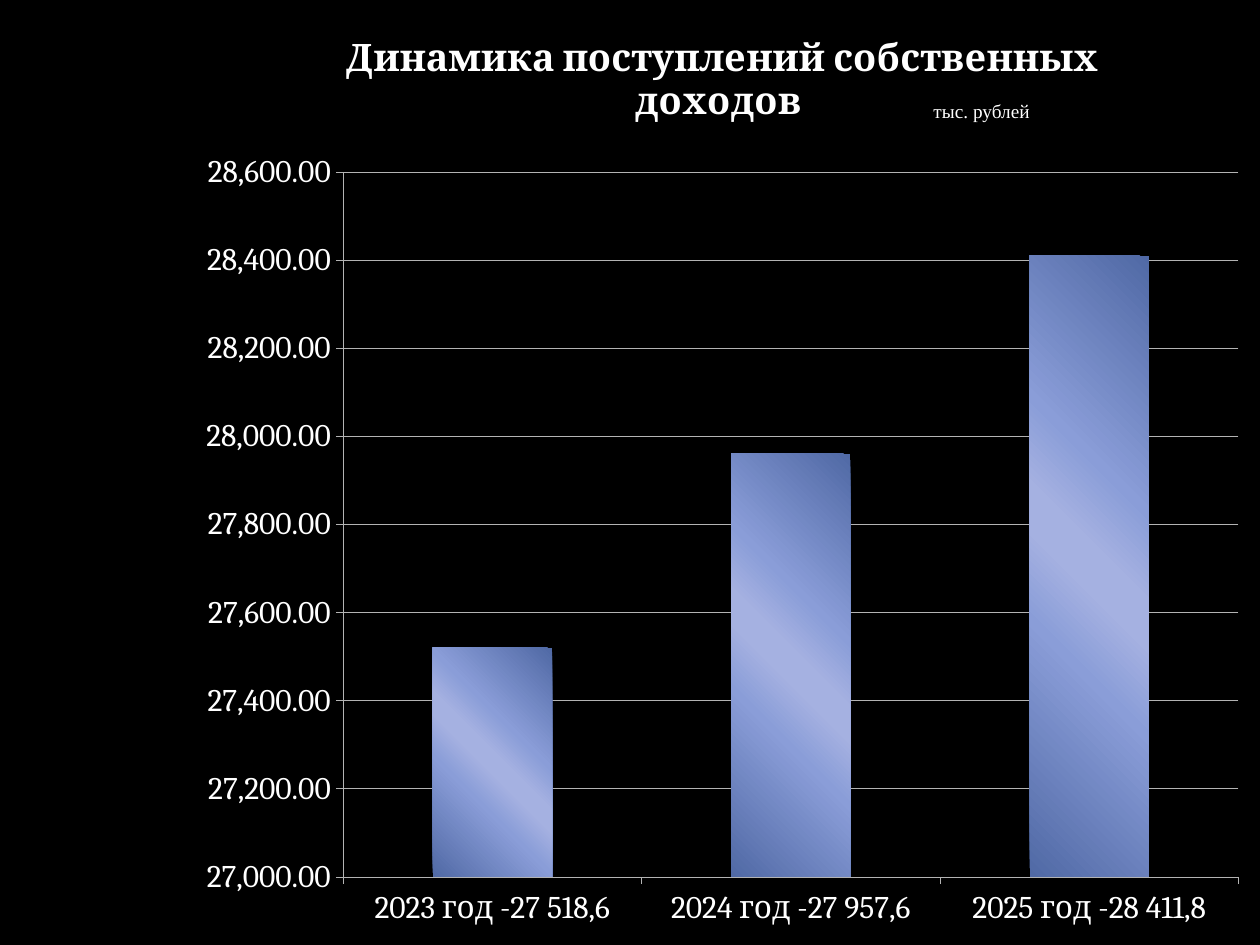
from lxml import etree
from pptx import Presentation, util as u
from pptx.chart.data import CategoryChartData
from pptx.dml.color import RGBColor
from pptx.enum import chart as charts, text
from pptx.oxml import parse_xml
from pptx.oxml.ns import nsdecls, qn

WIDTH, HEIGHT = 10, 7.5
WHITE, AXIS_GREY = "FFFFFF", "B3B3B3"
TITLE = "Динамика поступлений собственных доходов "
INCOME = {
    "2023 год -27 518,6": 27520,
    "2024 год -27 957,6": 27960,
    "2025 год -28 411,8": 28410,
}
BAR_STOPS = [(0, "5069A5"), (35, "8A9DD8"), (47, "A5B1E1"),
             (53, "A5B1E1"), (65, "8A9DD8"), (100, "5069A5")]


def color(hex_string):
    return RGBColor.from_string(hex_string)


def box(left, top, width, height):
    """Turn shares of the slide's size into lengths."""
    return (u.Inches(left * WIDTH), u.Inches(top * HEIGHT),
            u.Inches(width * WIDTH), u.Inches(height * HEIGHT))


def style_font(font, name, size, bold=False):
    font.name, font.size, font.bold = name, u.Pt(size), bold
    font.color.rgb = color(WHITE)


def style_line(line):
    line.color.rgb = color(AXIS_GREY)
    line.width = u.Pt(0.25)


def fill_gradient(series, stops, degrees):
    stop_xml = "".join(
        f'<a:gs pos="{share * 1000}"><a:srgbClr val="{value}"/></a:gs>'
        for share, value in stops)
    properties = series.format.fill._xPr
    properties.insert(0, parse_xml(
        f'<a:gradFill {nsdecls("a")} rotWithShape="1"><a:gsLst>{stop_xml}</a:gsLst>'
        f'<a:lin ang="{degrees * 60000}" scaled="0"/></a:gradFill>'))


def place_plot(chart, **shares):
    """Fix the inner plot area at shares of the chart's size."""
    area = chart._chartSpace.chart.plotArea
    for old in area.findall(qn("c:layout")):
        area.remove(old)
    layout = etree.Element(qn("c:layout"))
    manual = etree.SubElement(layout, qn("c:manualLayout"))
    settings = {"layoutTarget": "inner", "xMode": "edge", "yMode": "edge", **shares}
    for tag, value in settings.items():
        etree.SubElement(manual, qn(f"c:{tag}")).set("val", str(value))
    area.insert(0, layout)


def add_income_chart(slide):
    data = CategoryChartData(number_format="#,##0.00")
    data.categories = list(INCOME)
    data.add_series(TITLE, list(INCOME.values()))
    chart = slide.shapes.add_chart(
        charts.XL_CHART_TYPE.COLUMN_STACKED, *box(0.147, 0, 0.853, 1), data).chart
    style_font(chart.font, "Cambria", 18)
    chart.has_legend = False

    chart.has_title = True
    run = chart.chart_title.text_frame.paragraphs[0].add_run()
    run.text = TITLE
    style_font(run.font, "Cambria", 21.6, bold=True)
    chart.chart_title.include_in_layout = False

    plot = chart.plots[0]
    plot.vary_by_categories = False
    plot.gap_width, plot.overlap = 150, 100
    fill_gradient(plot.series[0], BAR_STOPS, 315)

    for axis in (chart.category_axis, chart.value_axis):
        axis.major_tick_mark = charts.XL_TICK_MARK.OUTSIDE
        style_line(axis.format.line)
    values = chart.value_axis
    values.minimum_scale, values.maximum_scale, values.major_unit = 27000, 28600, 200
    values.tick_labels.number_format = "#,##0.00"
    values.tick_labels.number_format_is_linked = False
    style_line(values.major_gridlines.format.line)
    place_plot(chart, x=0.147, y=0.182, w=0.833, h=0.746)


def add_unit_label(slide):
    frame = slide.shapes.add_textbox(*box(0.731, 0.099, 0.098, 0.038)).text_frame
    frame.word_wrap = False
    frame.auto_size = text.MSO_AUTO_SIZE.SHAPE_TO_FIT_TEXT
    run = frame.paragraphs[0].add_run()
    run.text = "тыс. рублей"
    style_font(run.font, "Times New Roman", 11)


def main():
    presentation = Presentation()
    presentation.slide_width, presentation.slide_height = u.Inches(WIDTH), u.Inches(HEIGHT)
    slide = presentation.slides.add_slide(presentation.slide_layouts[6])
    slide.background.fill.solid()
    slide.background.fill.fore_color.rgb = color("000000")
    add_income_chart(slide)
    add_unit_label(slide)
    presentation.save("out.pptx")


if __name__ == "__main__":
    main()
